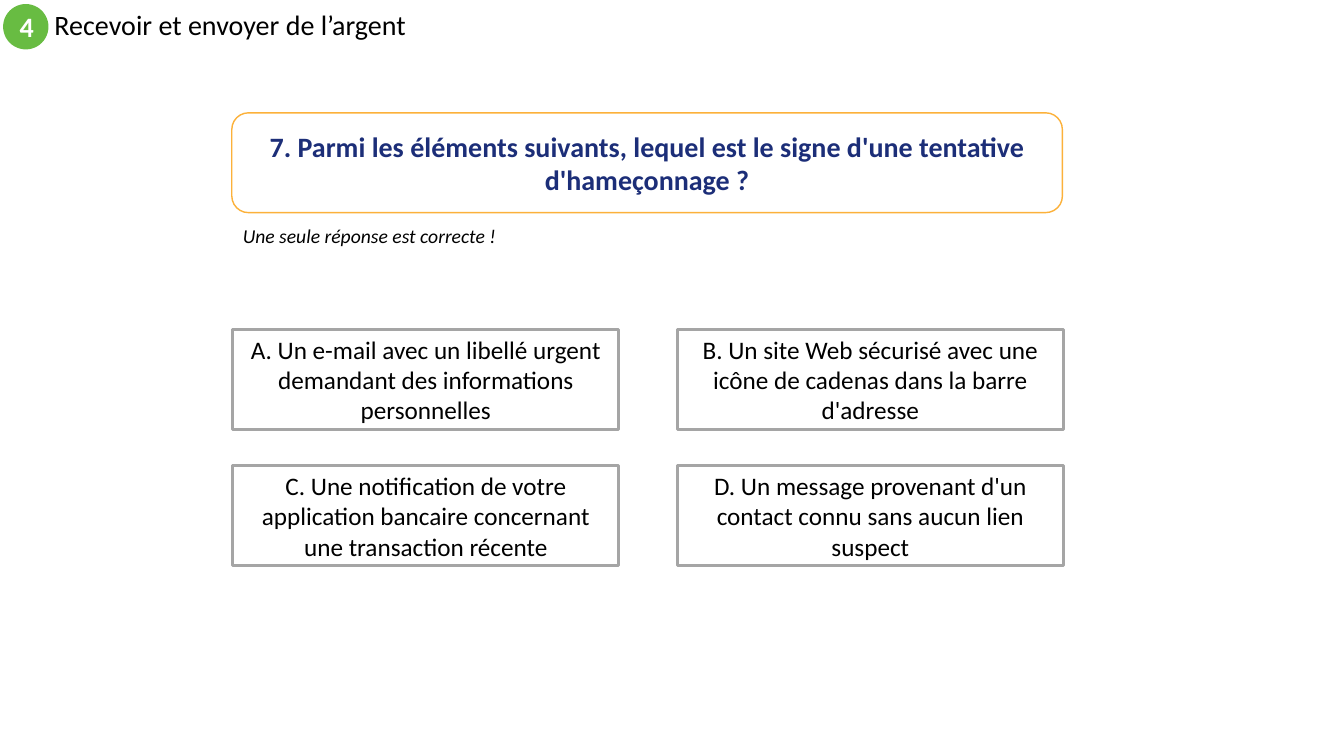
from pptx import Presentation
from pptx.dml.color import RGBColor
from pptx.enum.shapes import MSO_SHAPE
from pptx.enum.text import MSO_ANCHOR, MSO_AUTO_SIZE, PP_ALIGN
from pptx.util import Pt

# Content
SECTION = "4"
TITLE = "Recevoir et envoyer de l’argent"
QUESTION = ("7. Parmi les éléments suivants, lequel est le signe "
            "d'une tentative d'hameçonnage ?")
HINT = "Une seule réponse est correcte !"
ANSWERS = [
    "A. Un e-mail avec un libellé urgent demandant des informations personnelles",
    "B. Un site Web sécurisé avec une icône de cadenas dans la barre d'adresse",
    "C. Une notification de votre application bancaire concernant une transaction récente",
    "D. Un message provenant d'un contact connu sans aucun lien suspect",
]

# Style
FONT = "Calibri"
BLACK = RGBColor(0x00, 0x00, 0x00)
WHITE = RGBColor(0xFF, 0xFF, 0xFF)
GREEN = RGBColor(0x68, 0xBC, 0x42)
ORANGE = RGBColor(0xFC, 0xB1, 0x3A)
NAVY = RGBColor(0x1C, 0x2E, 0x78)
GREY = RGBColor(0xA5, 0xA5, 0xA5)
OVAL, ROUNDED, RECT = MSO_SHAPE.OVAL, MSO_SHAPE.ROUNDED_RECTANGLE, MSO_SHAPE.RECTANGLE
TOP, MIDDLE = MSO_ANCHOR.TOP, MSO_ANCHOR.MIDDLE
LEFT, CENTER = PP_ALIGN.LEFT, PP_ALIGN.CENTER

# Answer grid, in points
COLUMNS = 2
GRID_LEFT, GRID_TOP = 166.3, 235.5
STEP_X, STEP_Y = 317.5, 97.2
ANSWER_W, ANSWER_H = 275.8, 71.3


def write(sp, text, size, color=BLACK, align=LEFT, anchor=MIDDLE,
          bold=False, italic=False):
    tf = sp.text_frame
    tf.word_wrap = True
    tf.auto_size = MSO_AUTO_SIZE.NONE
    tf.vertical_anchor = anchor
    p = tf.paragraphs[0]
    p.text = text
    p.alignment = align
    font = p.runs[0].font
    font.name, font.size, font.color.rgb = FONT, Pt(size), color
    font.bold, font.italic = bold, italic
    return p


def add_box(s, kind, box, fill, line=None, width=1):
    sp = s.shapes.add_shape(kind, *map(Pt, box))
    sp.shadow.inherit = False
    sp.fill.solid()
    sp.fill.fore_color.rgb = fill
    if line is None:
        sp.line.fill.background()
    else:
        sp.line.color.rgb = line
        sp.line.width = Pt(width)
    return sp


prs = Presentation()
prs.slide_width, prs.slide_height = Pt(960), Pt(540)
s = prs.slides.add_slide(prs.slide_layouts[5])

# Section badge and title
badge = add_box(s, OVAL, (2.2, 2.9, 32.4, 32.4), GREEN)
write(badge, SECTION, 20, WHITE, CENTER, bold=True)
title = s.shapes.title
title.left, title.top, title.width, title.height = map(Pt, (31.7, 2.9, 576, 32.4))
write(title, TITLE, 20).line_spacing = 0.9

# Question and hint
question = add_box(s, ROUNDED, (165.6, 80.6, 593.3, 71.3), WHITE, ORANGE)
write(question, QUESTION, 20, NAVY, CENTER, bold=True)
hint = s.shapes.add_textbox(*map(Pt, (166.3, 156.2, 229, 24.5)))
write(hint, HINT, 14, anchor=TOP, italic=True)

# Answers
for i, answer in enumerate(ANSWERS):
    row, col = divmod(i, COLUMNS)
    box = (GRID_LEFT + col * STEP_X, GRID_TOP + row * STEP_Y, ANSWER_W, ANSWER_H)
    write(add_box(s, RECT, box, WHITE, GREY, 2), answer, 18, align=CENTER)

prs.save("out.pptx")
